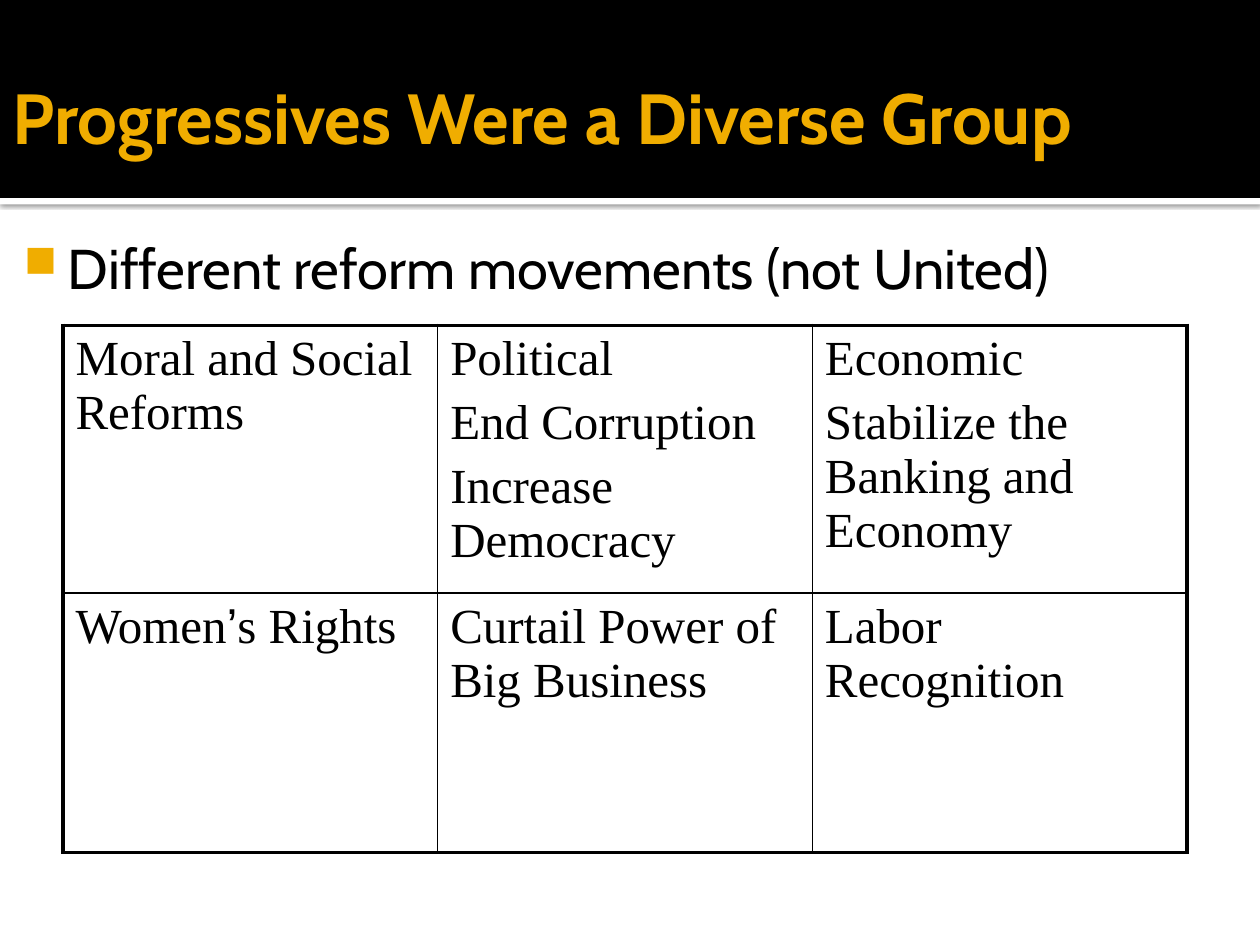
from lxml import etree
from pptx import Presentation
from pptx.dml.color import RGBColor
from pptx.enum.shapes import MSO_SHAPE as Shape
from pptx.enum.text import MSO_ANCHOR as Anchor, PP_ALIGN as Align
from pptx.oxml import parse_xml
from pptx.oxml.ns import nsdecls, qn
from pptx.util import Cm, Pt

GOLD, BLACK, WHITE = "F0AD00", "000000", "FFFFFF"
SERIF = "Times New Roman"
REFORMS = [
    [["Moral and Social Reforms"],
     ["Political", "End Corruption", "Increase Democracy"],
     ["Economic", "Stabilize the Banking and Economy"]],
    [["Women’s Rights"], ["Curtail Power of Big Business"], ["Labor Recognition"]],
]


def rgb(color):
    return RGBColor.from_string(color)


def add_run(p, text, **font):
    r = p.add_run()
    r.text = text
    r.font.color.rgb = rgb(font.pop("color", BLACK))
    for name, value in font.items():
        setattr(r.font, name, value)


def set_frame(tf, insets, anchor):
    """Set the wrap, anchor and left, top, right, bottom insets in cm."""
    tf.word_wrap, tf.vertical_anchor = True, anchor
    for side, inset in zip(("left", "top", "right", "bottom"), insets):
        setattr(tf, f"margin_{side}", Cm(inset))


def add_bar(s, x, y, w, h, color):
    sp = s.shapes.add_shape(Shape.RECTANGLE, Cm(x), Cm(y), Cm(w), Cm(h))
    sp.fill.solid()
    sp.fill.fore_color.rgb = rgb(color)
    sp.line.fill.background()
    sp.shadow.inherit = False
    return sp


def add_header(s, x, y, w, h):
    strip = add_bar(s, x, y + h, w, 0.13, WHITE)
    shadow = parse_xml(
        f'<a:outerShdw {nsdecls("a")} blurRad="{Pt(2.5)}" dist="{Pt(0.8)}" dir="5400000" '
        f'rotWithShape="0"><a:srgbClr val="{BLACK}"><a:alpha val="60000"/></a:srgbClr>'
        '</a:outerShdw>')
    strip._element.spPr.find(qn("a:effectLst")).append(shadow)
    add_bar(s, x, y, w, h, BLACK)

    title = s.shapes.title
    s.shapes._spTree.append(title._element)  # bring in front of the bars
    title.left, title.top = Cm(x), Cm(y + 0.76)
    title.width, title.height = Cm(w - 2.54), Cm(3.18)
    tf = title.text_frame
    set_frame(tf, (0.25, 0.13, 0.13, 0.13), Anchor.MIDDLE)
    tf.paragraphs[0].alignment = Align.LEFT
    add_run(tf.paragraphs[0], "Progressives Were a Diverse Group",
            size=Pt(40.5), name="Cabin", bold=True, color=GOLD)


def add_bullet_text(s, x, y, w, h):
    tf = s.shapes.add_textbox(Cm(x), Cm(y), Cm(w), Cm(h)).text_frame
    set_frame(tf, (0.15, 0.25, 0.25, 0.13), Anchor.TOP)
    p = tf.paragraphs[0]
    add_run(p, "Different reform movements (not United)", size=Pt(32), name="Cabin")
    pPr = p._p.get_or_add_pPr()
    pPr.set("marL", str(Cm(1.22)))
    pPr.set("indent", str(Cm(-0.89)))
    color = etree.SubElement(pPr, qn("a:buClr"))
    etree.SubElement(color, qn("a:srgbClr"), val=GOLD)
    etree.SubElement(pPr, qn("a:buSzPct"), val="80000")
    etree.SubElement(pPr, qn("a:buChar"), char="■")


def set_borders(cell, widths):
    """Draw the left, right, top and bottom borders, with widths in points."""
    tcPr = cell._tc.get_or_add_tcPr()
    for i, (side, width) in enumerate(zip("LRTB", widths)):
        tcPr.insert(i, parse_xml(
            f'<a:ln{side} {nsdecls("a")} w="{Pt(width)}"><a:solidFill>'
            f'<a:srgbClr val="{BLACK}"/></a:solidFill></a:ln{side}>'))


def fill_cell(cell, lines):
    cell.fill.background()
    tf = cell.text_frame
    for i, line in enumerate(lines):
        p = tf.add_paragraph() if i else tf.paragraphs[0]
        p.space_before = Pt(5.6)
        before, mark, after = line.partition("’")
        for text, font in ((before, SERIF), (mark, "Arial"), (after, SERIF)):
            if text:
                add_run(p, text, size=Pt(28), name=font)


def add_reform_table(s, x, y, w, h):
    rows, cols = len(REFORMS), len(REFORMS[0])
    table = s.shapes.add_table(rows, cols, Cm(x), Cm(y), Cm(w), Cm(h)).table
    table.first_row = table.horz_banding = False
    for i, row in enumerate(REFORMS):
        for j, lines in enumerate(row):
            cell = table.cell(i, j)
            fill_cell(cell, lines)
            outer = (j == 0, j == cols - 1, i == 0, i == rows - 1)
            set_borders(cell, [2.25 if edge else 1 for edge in outer])


def main():
    prs = Presentation()
    prs.slide_width, prs.slide_height = Cm(25.4), Cm(19.05)
    s = prs.slides.add_slide(prs.slide_layouts[5])
    add_header(s, 0, 0, 25.4, 3.99)
    add_bullet_text(s, 0, 4.45, 22.86, 12.57)
    add_reform_table(s, 1.27, 6.56, 22.66, 10.46)
    prs.save("out.pptx")


if __name__ == "__main__":
    main()
